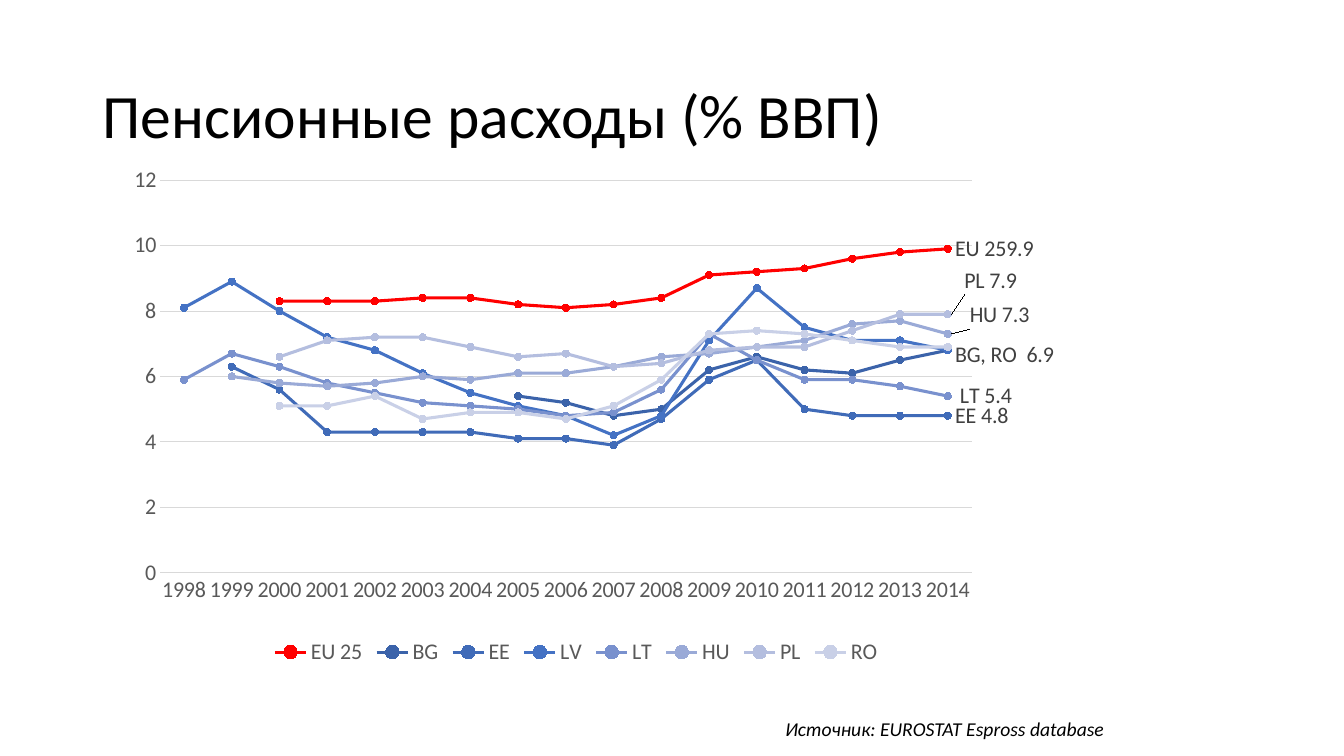
import lxml.etree
import pptx
import pptx.chart.data
import pptx.dml.color
import pptx.enum.chart
import pptx.enum.text
import pptx.oxml.ns
import pptx.util

PX = 9144
FONT = "Calibri"
GREY = "595959"
RULE = "D9D9D9"
FIRST_YEAR, LAST_YEAR = 1998, 2014

TITLE = "Пенсионные расходы (% ВВП)"
SOURCE = "Источник: EUROSTAT Espross database"
TITLE_BOX = (92, 40, 1150, 145)
CHART_BOX = (115, 159, 931, 506)
SOURCE_BOX = (769, 706, 349, 34)
PLOT_AREA = {"x": 0.048, "y": 0.039, "w": 0.882, "h": 0.77}

COUNTRIES = [
    ("EU 25", "FF0000", [8.3, 8.3, 8.3, 8.4, 8.4, 8.2, 8.1, 8.2, 8.4, 9.1, 9.2, 9.3, 9.6, 9.8, 9.9]),
    ("BG", "3B63AA", [5.4, 5.2, 4.8, 5, 6.2, 6.6, 6.2, 6.1, 6.5, 6.8]),
    ("EE", "406BB8", [6.3, 5.6, 4.3, 4.3, 4.3, 4.3, 4.1, 4.1, 3.9, 4.7, 5.9, 6.5, 5, 4.8, 4.8, 4.8]),
    ("LV", "4472C4", [8.1, 8.9, 8, 7.2, 6.8, 6.1, 5.5, 5.1, 4.8, 4.2, 4.8, 7.1, 8.7, 7.5, 7.1, 7.1, 6.8]),
    ("LT", "7991CE", [5.9, 6.7, 6.3, 5.8, 5.5, 5.2, 5.1, 5, 4.8, 4.9, 5.6, 7.3, 6.5, 5.9, 5.9, 5.7, 5.4]),
    ("HU", "9AAAD7", [6, 5.8, 5.7, 5.8, 6, 5.9, 6.1, 6.1, 6.3, 6.6, 6.7, 6.9, 7.1, 7.6, 7.7, 7.3]),
    ("PL", "B4BEDF", [6.6, 7.1, 7.2, 7.2, 6.9, 6.6, 6.7, 6.3, 6.4, 6.8, 6.9, 6.9, 7.4, 7.9, 7.9]),
    ("RO", "C9D0E7", [5.1, 5.1, 5.4, 4.7, 4.9, 4.9, 4.7, 5.1, 5.9, 7.3, 7.4, 7.3, 7.1, 6.9, 6.9]),
]
END_LABELS = {
    "EU 25": ("EU 259.9", 0, 0),
    "EE": ("EE 4.8", 0, 0),
    "LT": (" LT 5.4", 0, 0),
    "HU": ("HU 7.3", 15, -18),
    "PL": ("PL 7.9", 9, -33),
    "RO": ("BG, RO  6.9", 0, 8),
}


def rgb(value):
    return pptx.dml.color.RGBColor.from_string(value)


def box(lengths):
    return [length * PX for length in lengths]


def style(font, size, color, italic=None):
    font.name = FONT
    font.size = pptx.util.Pt(size)
    font.color.rgb = rgb(color)
    font.italic = italic


def rule(line, color, width):
    line.color.rgb = rgb(color)
    line.width = pptx.util.Pt(width)


def manual_layout(settings):
    layout = lxml.etree.Element(pptx.oxml.ns.qn("c:layout"))
    manual = lxml.etree.SubElement(layout, pptx.oxml.ns.qn("c:manualLayout"))
    for tag, value in settings.items():
        lxml.etree.SubElement(manual, pptx.oxml.ns.qn("c:" + tag)).set("val", str(value))
    return layout


def add_text(slide, place, text, size, italic=None, wrap=True):
    frame = slide.shapes.add_textbox(*box(place)).text_frame
    frame.word_wrap = wrap
    frame.vertical_anchor = pptx.enum.text.MSO_ANCHOR.MIDDLE
    frame.text = text
    style(frame.paragraphs[0].runs[0].font, size, "000000", italic)


def label_end(series, text, dx, dy):
    series.data_labels.show_value = False
    label = series.points[LAST_YEAR - FIRST_YEAR].data_label
    label.text_frame.text = text
    style(label.text_frame.paragraphs[0].runs[0].font, 16, "404040")
    label.position = pptx.enum.chart.XL_LABEL_POSITION.RIGHT
    if dx or dy:
        shift = {"x": round(dx / CHART_BOX[2], 3), "y": round(dy / CHART_BOX[3], 3)}
        index = series._element.xpath("c:dLbls/c:dLbl/c:idx")[0]
        index.addnext(manual_layout(shift))


def add_spending_chart(slide):
    years = range(FIRST_YEAR, LAST_YEAR + 1)
    spending = pptx.chart.data.CategoryChartData()
    spending.categories = [str(year) for year in years]
    for name, _, values in COUNTRIES:
        spending.add_series(name, [None] * (len(years) - len(values)) + values)
    chart = slide.shapes.add_chart(
        pptx.enum.chart.XL_CHART_TYPE.LINE_MARKERS, *box(CHART_BOX), spending
    ).chart
    style(chart.font, 16, "000000")
    chart.has_title = False
    chart.has_legend = True
    chart.legend.position = pptx.enum.chart.XL_LEGEND_POSITION.BOTTOM
    chart.legend.include_in_layout = False
    style(chart.legend.font, 16, GREY)

    for axis in (chart.category_axis, chart.value_axis):
        axis.major_tick_mark = pptx.enum.chart.XL_TICK_MARK.NONE
        axis.minor_tick_mark = pptx.enum.chart.XL_TICK_MARK.NONE
        style(axis.tick_labels.font, 16, GREY)
    rule(chart.category_axis.format.line, RULE, 0.75)
    chart.value_axis.format.line.fill.background()
    chart.value_axis.minimum_scale = 0
    chart.value_axis.maximum_scale = 12
    chart.value_axis.major_unit = 2
    rule(chart.value_axis.major_gridlines.format.line, RULE, 0.75)

    plot_area = chart._chartSpace.xpath("c:chart/c:plotArea")[0]
    for layout in plot_area.xpath("c:layout"):
        plot_area.remove(layout)
    edges = {"layoutTarget": "inner", "xMode": "edge", "yMode": "edge"}
    plot_area.insert(0, manual_layout({**edges, **PLOT_AREA}))

    chart.plots[0].vary_by_categories = False
    for series, (name, color, _) in zip(chart.plots[0].series, COUNTRIES):
        series.smooth = False
        rule(series.format.line, color, 2.25)
        series.marker.style = pptx.enum.chart.XL_MARKER_STYLE.CIRCLE
        series.marker.size = 5
        series.marker.format.fill.solid()
        series.marker.format.fill.fore_color.rgb = rgb(color)
        rule(series.marker.format.line, color, 0.75)
        if name in END_LABELS:
            label_end(series, *END_LABELS[name])


def main():
    deck = pptx.Presentation()
    deck.slide_width, deck.slide_height = box((1333, 750))
    slide = deck.slides.add_slide(deck.slide_layouts[6])
    add_text(slide, TITLE_BOX, TITLE, 44)
    add_spending_chart(slide)
    add_text(slide, SOURCE_BOX, SOURCE, 14, italic=True, wrap=False)
    deck.save("out.pptx")


if __name__ == "__main__":
    main()
